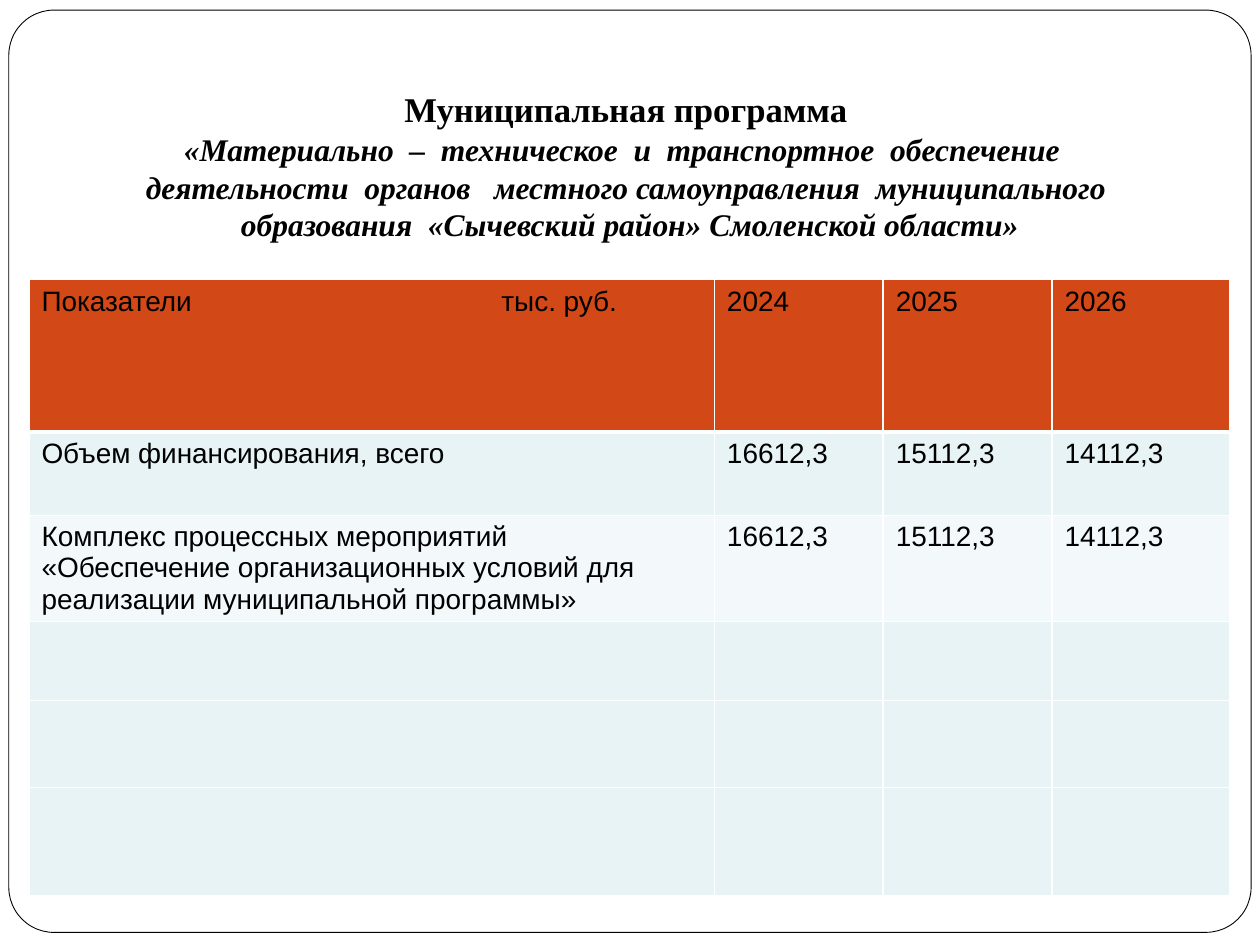
import pptx
import pptx.util
from lxml import etree
from pptx.dml.color import RGBColor
from pptx.enum.shapes import MSO_SHAPE
from pptx.enum.text import MSO_ANCHOR, MSO_AUTO_SIZE, PP_ALIGN
from pptx.oxml.ns import qn
from pptx.util import Inches, Pt

BLACK = RGBColor(0x00, 0x00, 0x00)
WHITE = RGBColor(0xFF, 0xFF, 0xFF)
ORANGE = RGBColor(0xD3, 0x48, 0x17)
PALE = RGBColor(0xE7, 0xF3, 0xF4)
PALER = RGBColor(0xF3, 0xF9, 0xFA)

TITLE_LINES = [
    ("Муниципальная программа ", 19.8, False),
    ("«Материально  –  техническое  и  транспортное  обеспечение  ", 18, True),
    ("деятельности  органов   местного самоуправления  муниципального ", 18, True),
    (" образования  «Сычевский район» Смоленской области» ", 18, True),
]
# (row height, fill, cell texts)
ROWS = [
    (1.21, ORANGE, ["Показатели\tтыс. руб.", "2024", "2025", "2026"]),
    (0.66, PALE, ["Объем финансирования, всего", "16612,3", "15112,3", "14112,3"]),
    (0.74, PALER, ["Комплекс процессных мероприятий «Обеспечение организационных "
                   "условий для реализации муниципальной программы»",
                   "16612,3", "15112,3", "14112,3"]),
    (0.63, PALE, [""] * 4),
    (0.69, PALE, [""] * 4),
    (0.86, PALE, [""] * 4),
]
COLUMN_WIDTHS = [5.44, 1.34, 1.34, 1.41]
UNIT_TAB = 3.65


def set_format(target, values):
    for name, value in values.items():
        setattr(target, name, value)


def set_borders(cell, widths):
    """Give the cell white borders; widths are points by side tag."""
    properties = cell._tc.get_or_add_tcPr()
    for position, (side, width) in enumerate(widths.items()):
        line = etree.Element(qn(f"a:{side}"), w=str(Pt(width)))
        fill = etree.SubElement(line, qn("a:solidFill"))
        etree.SubElement(fill, qn("a:srgbClr"), val=str(WHITE))
        properties.insert(position, line)


def add_frame(slide):
    frame = slide.shapes.add_shape(MSO_SHAPE.ROUNDED_RECTANGLE, Inches(0.07),
                                   Inches(0.08), Inches(9.86), Inches(7.32))
    frame.adjustments[0] = 0.049
    frame.shadow.inherit = False
    frame.fill.solid()
    frame.fill.fore_color.rgb = WHITE
    frame.line.color.rgb = BLACK
    frame.line.width = Pt(0.5)
    slide.shapes._spTree.insert(2, frame._element)  # behind the title


def add_title(slide):
    title = slide.shapes.title
    set_format(title, {"left": Inches(0.5), "top": Inches(0.3),
                       "width": Inches(9), "height": Inches(1.73)})
    set_format(title.text_frame, {
        "auto_size": MSO_AUTO_SIZE.NONE, "word_wrap": True,
        "vertical_anchor": MSO_ANCHOR.BOTTOM,
        "margin_left": Inches(0.1), "margin_right": Inches(0.1),
        "margin_top": Inches(0.05), "margin_bottom": Inches(0.1)})
    paragraph = title.text_frame.paragraphs[0]
    paragraph.alignment = PP_ALIGN.CENTER
    for index, (text, size, italic) in enumerate(TITLE_LINES):
        if index:
            paragraph.add_line_break()
        run = paragraph.add_run()
        run.text = text
        set_format(run.font, {"name": "Times New Roman", "size": Pt(size),
                              "bold": True, "italic": italic})
        run.font.color.rgb = BLACK


def add_budget_table(slide):
    table = slide.shapes.add_table(
        len(ROWS), len(COLUMN_WIDTHS), Inches(0.23), Inches(2.22),
        Inches(sum(COLUMN_WIDTHS)), Inches(sum(row[0] for row in ROWS))).table
    for column, width in zip(table.columns, COLUMN_WIDTHS):
        column.width = Inches(width)
    for row_index, (height, color, texts) in enumerate(ROWS):
        table.rows[row_index].height = Inches(height)
        for column_index, text in enumerate(texts):
            cell = table.cell(row_index, column_index)
            cell.fill.solid()
            cell.fill.fore_color.rgb = color
            set_borders(cell, {"lnL": 1, "lnR": 1,
                               "lnT": 3 if row_index == 1 else 1,
                               "lnB": 3 if row_index == 0 else 1})
            cell.text = text
            paragraph = cell.text_frame.paragraphs[0]
            set_format(paragraph.font, {"name": "Arial", "size": Pt(16)})
            for run in paragraph.runs:
                set_format(run.font, {"name": "Arial", "size": Pt(16), "bold": False})
                run.font.color.rgb = BLACK
    header = table.cell(0, 0).text_frame.paragraphs[0]
    tabs = etree.Element(qn("a:tabLst"))
    etree.SubElement(tabs, qn("a:tab"), pos=str(Inches(UNIT_TAB)), algn="l")
    header._p.get_or_add_pPr().insert(0, tabs)


def main():
    presentation = pptx.Presentation()
    presentation.slide_width = Inches(10)
    presentation.slide_height = Inches(7.5)
    slide = presentation.slides.add_slide(presentation.slide_layouts[5])
    add_frame(slide)
    add_title(slide)
    add_budget_table(slide)
    presentation.save("out.pptx")


if __name__ == "__main__":
    main()
